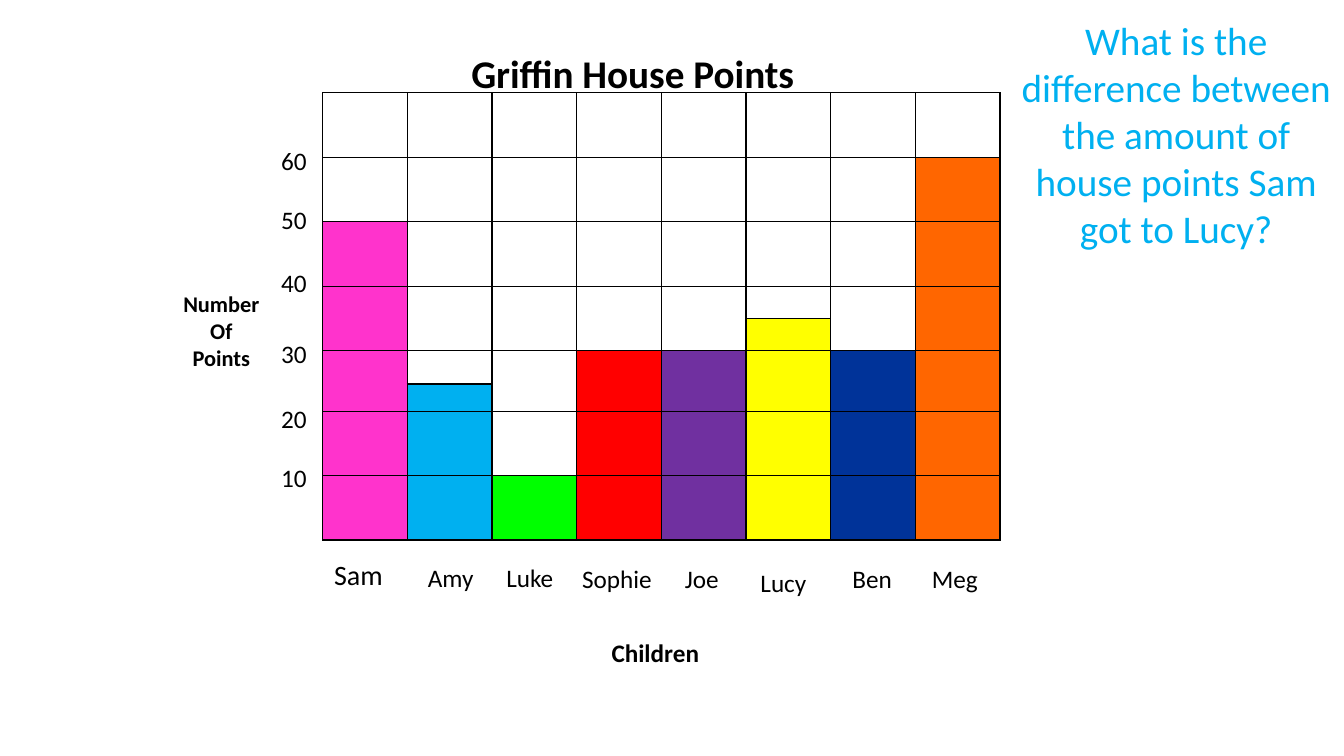
from lxml.etree import SubElement
from pptx import Presentation
from pptx.dml.color import RGBColor
from pptx.enum.text import MSO_ANCHOR, MSO_AUTO_SIZE, PP_ALIGN
from pptx.oxml.ns import qn
from pptx.util import Inches, Pt

BLACK = RGBColor(0x00, 0x00, 0x00)
PINK = RGBColor(0xFF, 0x33, 0xCC)
SKY = RGBColor(0x00, 0xB0, 0xF0)
GREEN = RGBColor(0x00, 0xFF, 0x00)
RED = RGBColor(0xFF, 0x00, 0x00)
PURPLE = RGBColor(0x70, 0x30, 0xA0)
YELLOW = RGBColor(0xFF, 0xFF, 0x00)
NAVY = RGBColor(0x00, 0x33, 0x99)
ORANGE = RGBColor(0xFF, 0x66, 0x00)

HEADING = "Griffin House Points"
QUESTION = "What is the difference between the amount of house points Sam got to Lucy?"
POINTS_AXIS = "Number\nOf\nPoints"
CHILDREN_AXIS = "Children"

# child, points, bar colour, label (left, top, width, size)
CHILDREN = [
    ("Sam", 50, PINK, (3.14, 5.48, 0.83, 20)),
    ("Amy", 25, SKY, (4.14, 5.53, 0.66, 18)),
    ("Luke", 10, GREEN, (4.92, 5.53, 0.67, 18)),
    ("Sophie", 30, RED, (5.67, 5.54, 0.9, 18)),
    ("Joe", 30, PURPLE, (6.69, 5.54, 0.54, 18)),
    ("Lucy", 35, YELLOW, (7.44, 5.58, 0.66, 18)),
    ("Ben", 30, NAVY, (8.35, 5.54, 0.6, 18)),
    ("Meg", 60, ORANGE, (9.14, 5.54, 0.66, 18)),
]
SCALE = {10: 4.54, 20: 3.95, 30: 3.31, 40: 2.6, 50: 1.98, 60: 1.39}
BANDS = [(70, 0.64), (60, 0.64), (50, 0.64), (40, 0.32), (35, 0.32),
         (30, 0.33), (25, 0.27), (20, 0.64), (10, 0.64)]
HALF_BANDS = (35, 25)
GRID_LEFT, GRID_TOP, COLUMN = 3.2, 0.92, 0.84


def write(box, text, size, color=BLACK, bold=False, align=PP_ALIGN.CENTER, wrap=True):
    frame = box.text_frame
    frame.text = text
    frame_format = {"word_wrap": wrap, "auto_size": MSO_AUTO_SIZE.SHAPE_TO_FIT_TEXT,
                    "vertical_anchor": MSO_ANCHOR.TOP}
    for key, value in frame_format.items():
        setattr(frame, key, value)
    for paragraph in frame.paragraphs:
        paragraph.alignment = align
        for run in paragraph.runs:
            run.font.color.rgb = color
            for key, value in {"name": "Calibri", "size": Pt(size), "bold": bold}.items():
                setattr(run.font, key, value)


def label(slide, place, text, size, **style):
    write(slide.shapes.add_textbox(*map(Inches, place)), text, size, **style)


def outline(cell):
    properties = cell._tc.get_or_add_tcPr()
    for position, side in enumerate(("a:lnL", "a:lnR", "a:lnT", "a:lnB")):
        line = properties.makeelement(qn(side), {"w": str(Pt(1))})
        fill = SubElement(line, qn("a:solidFill"))
        SubElement(fill, qn("a:srgbClr"), val=str(BLACK))
        properties.insert(position, line)


def draw_bars(slide):
    height = sum(band for _, band in BANDS)
    grid = slide.shapes.add_table(
        len(BANDS), len(CHILDREN), Inches(GRID_LEFT), Inches(GRID_TOP),
        Inches(COLUMN * len(CHILDREN)), Inches(height)).table
    grid.first_row = grid.horz_banding = False
    for row, (_, band) in zip(grid.rows, BANDS):
        row.height = Inches(band)
    for column, (_, points, color, _) in enumerate(CHILDREN):
        grid.columns[column].width = Inches(COLUMN)
        for row, (level, _) in enumerate(BANDS):
            cell = grid.cell(row, column)
            for margin in ("left", "right", "top", "bottom"):
                setattr(cell, f"margin_{margin}", 0)
            SubElement(cell.text_frame.paragraphs[0]._p, qn("a:endParaRPr"), sz="100")
            if points >= level:
                cell.fill.solid()
                cell.fill.fore_color.rgb = color
            else:
                cell.fill.background()
            outline(cell)
            if level in HALF_BANDS and points != level:
                grid.cell(row - 1, column).merge(cell)


def main():
    deck = Presentation()
    deck.slide_width, deck.slide_height = Inches(13.33), Inches(7.5)
    slide = deck.slides.add_slide(deck.slide_layouts[5])
    draw_bars(slide)

    heading = slide.shapes.title
    place = {"left": 3.6, "top": 0.44, "width": 5.35, "height": 0.57}
    for key, value in place.items():
        setattr(heading, key, Inches(value))
    write(heading, HEADING, 28, bold=True)

    for points, top in SCALE.items():
        label(slide, (2.68, top, 0.46, 0.4), str(points), 18,
              align=PP_ALIGN.RIGHT, wrap=False)
    for child, _, _, (left, top, width, size) in CHILDREN:
        label(slide, (left, top, width, size / 45), child, size, wrap=False)

    label(slide, (1.67, 2.83, 1.05, 0.91), POINTS_AXIS, 16, bold=True)
    label(slide, (5.96, 6.27, 1.08, 0.4), CHILDREN_AXIS, 18, bold=True, wrap=False)
    label(slide, (9.99, 0.11, 3.35, 2.46), QUESTION, 28, color=SKY)
    deck.save("out.pptx")


if __name__ == "__main__":
    main()
